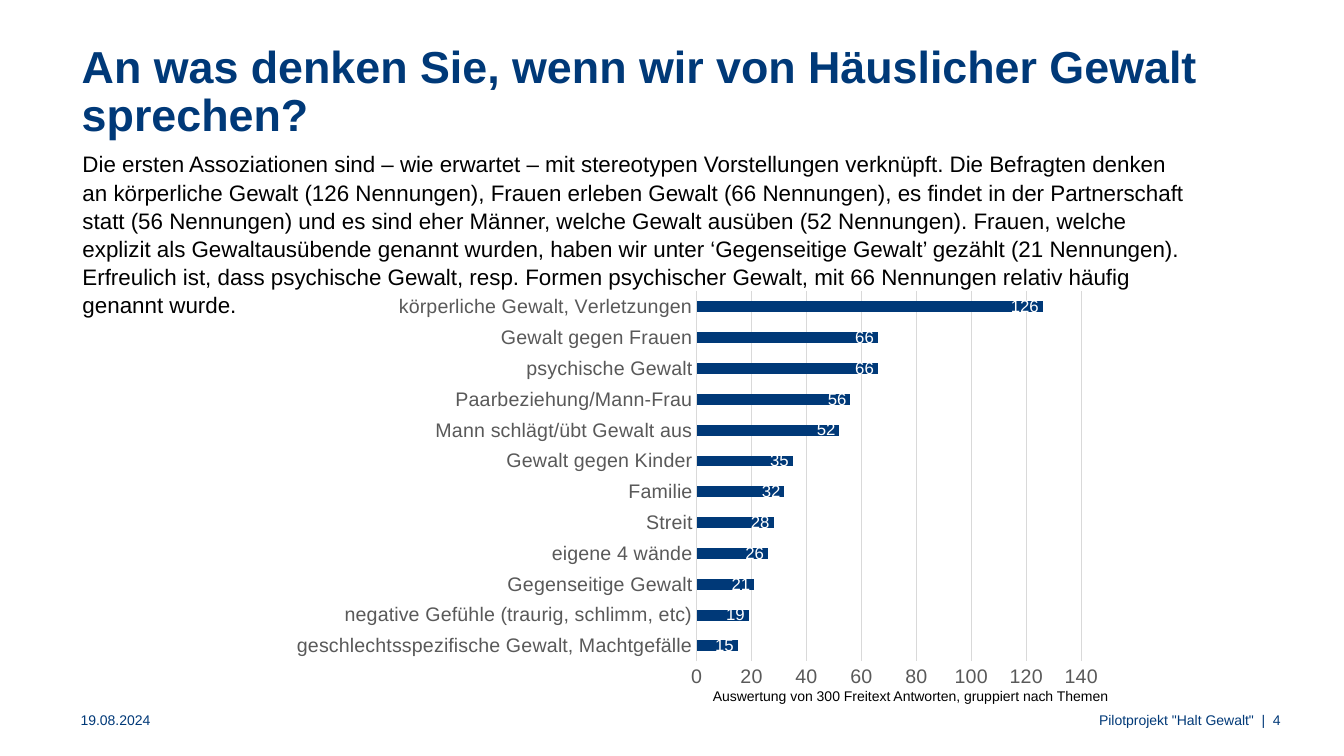
from pptx import Presentation
from pptx.chart.data import CategoryChartData
from pptx.dml.color import RGBColor
from pptx.enum import chart as kinds, text
from pptx.util import Cm, Pt

NAVY = RGBColor(0x00, 0x39, 0x78)
BLACK = RGBColor(0, 0, 0)
WHITE = RGBColor(0xFF, 0xFF, 0xFF)
GREY = RGBColor(0x59, 0x59, 0x59)
PALE = RGBColor(0xD9, 0xD9, 0xD9)
FONT = "Arial"
LEFT, RIGHT = text.PP_ALIGN.LEFT, text.PP_ALIGN.RIGHT

TITLE = "An was denken Sie, wenn wir von Häuslicher Gewalt sprechen?"
BODY = (
    "Die ersten Assoziationen sind – wie erwartet – mit stereotypen Vorstellungen "
    "verknüpft. Die Befragten denken an körperliche Gewalt (126 Nennungen), Frauen "
    "erleben Gewalt (66 Nennungen), es findet in der Partnerschaft statt (56 Nennungen) "
    "und es sind eher Männer, welche Gewalt ausüben (52 Nennungen). Frauen, welche "
    "explizit als Gewaltausübende genannt wurden, haben wir unter ‘Gegenseitige Gewalt’ "
    "gezählt (21 Nennungen). Erfreulich ist, dass psychische Gewalt, resp. Formen "
    "psychischer Gewalt, mit 66 Nennungen relativ häufig genannt wurde."
)
NOTE = "Auswertung von 300 Freitext Antworten, gruppiert nach Themen"
COUNTS = {
    "geschlechtsspezifische Gewalt, Machtgefälle": 15,
    "negative Gefühle (traurig, schlimm, etc)": 19,
    "Gegenseitige Gewalt": 21,
    "eigene 4 wände": 26,
    "Streit": 28,
    "Familie": 32,
    "Gewalt gegen Kinder": 35,
    "Mann schlägt/übt Gewalt aus": 52,
    "Paarbeziehung/Mann-Frau": 56,
    "psychische Gewalt": 66,
    "Gewalt gegen Frauen": 66,
    "körperliche Gewalt, Verletzungen": 126,
}


def apply(item, values):
    for name, value in values.items():
        setattr(item, name, value)


def style(font, size, color, bold=False):
    apply(font, {"name": FONT, "size": Pt(size), "bold": bold})
    font.color.rgb = color


def place(shape, box):
    apply(shape, dict(zip(("left", "top", "width", "height"), map(Cm, box))))


def fill(shape, words, size, color, bold=False, **format):
    """Write one paragraph into a shape without insets."""
    frame = shape.text_frame
    apply(frame, {
        "margin_left": 0, "margin_top": 0, "margin_right": 0, "margin_bottom": 0,
        "word_wrap": True, "auto_size": text.MSO_AUTO_SIZE.NONE,
        "vertical_anchor": text.MSO_ANCHOR.TOP,
    })
    line = frame.paragraphs[0]
    apply(line, {"alignment": LEFT, **format})
    run = line.add_run()
    run.text = words
    style(run.font, size, color, bold)


def add_text(slide, box, words, size, color, **format):
    shape = slide.shapes.add_textbox(*map(Cm, box))
    fill(shape, words, size, color, **format)


def rule(line):
    line.color.rgb = PALE
    line.width = Pt(0.75)


def add_bars(slide, box, counts):
    data = CategoryChartData()
    data.categories = list(counts)
    data.add_series("Nennungen", list(counts.values()))
    kind = kinds.XL_CHART_TYPE.BAR_CLUSTERED
    chart = slide.shapes.add_chart(kind, *map(Cm, box), data).chart
    apply(chart, {"has_legend": False, "has_title": False})
    style(chart.font, 10, BLACK)

    names, scale = chart.category_axis, chart.value_axis
    for axis in (names, scale):
        apply(axis, {
            "major_tick_mark": kinds.XL_TICK_MARK.NONE,
            "minor_tick_mark": kinds.XL_TICK_MARK.NONE,
        })
        style(axis.tick_labels.font, 14, GREY)
    rule(names.format.line)
    apply(scale, {
        "minimum_scale": 0, "maximum_scale": 140, "major_unit": 20,
        "has_major_gridlines": True,
    })
    scale.format.line.fill.background()
    rule(scale.major_gridlines.format.line)

    plot = chart.plots[0]
    apply(plot, {"gap_width": 182, "vary_by_categories": False})
    bars = plot.series[0].format.fill
    bars.solid()
    bars.fore_color.rgb = NAVY
    plot.has_data_labels = True
    apply(plot.data_labels, {
        "show_value": True, "position": kinds.XL_LABEL_POSITION.INSIDE_END,
    })
    style(plot.data_labels.font, 12, WHITE)


def main():
    deck = Presentation()
    apply(deck, {"slide_width": Cm(33.87), "slide_height": Cm(19.05)})
    slide = deck.slides.add_slide(deck.slide_layouts[5])

    title = slide.shapes.title
    place(title, (2.06, 1.12, 29.79, 2.46))
    fill(title, TITLE, 32, NAVY, bold=True, line_spacing=0.9)

    foot = 17.93
    add_text(slide, (2.03, foot, 4.8, 0.41), "19.08.2024", 10, NAVY)
    add_text(slide, (7.04, foot, 24.56, 0.41), 'Pilotprojekt "Halt Gewalt"',
             10, NAVY, alignment=RIGHT)
    add_text(slide, (31.6, foot, 1.45, 0.41), "  |  4", 10, NAVY)

    add_text(slide, (2.08, 3.76, 28.07, 10.8), BODY, 16, BLACK,
             space_after=Pt(6), line_spacing=1.05)
    add_bars(slide, (7.06, 7.14, 21.03, 10.39), COUNTS)
    add_text(slide, (3.12, 17.32, 24.8, 0.41), NOTE, 10, BLACK, alignment=RIGHT)
    deck.save("out.pptx")


if __name__ == "__main__":
    main()
